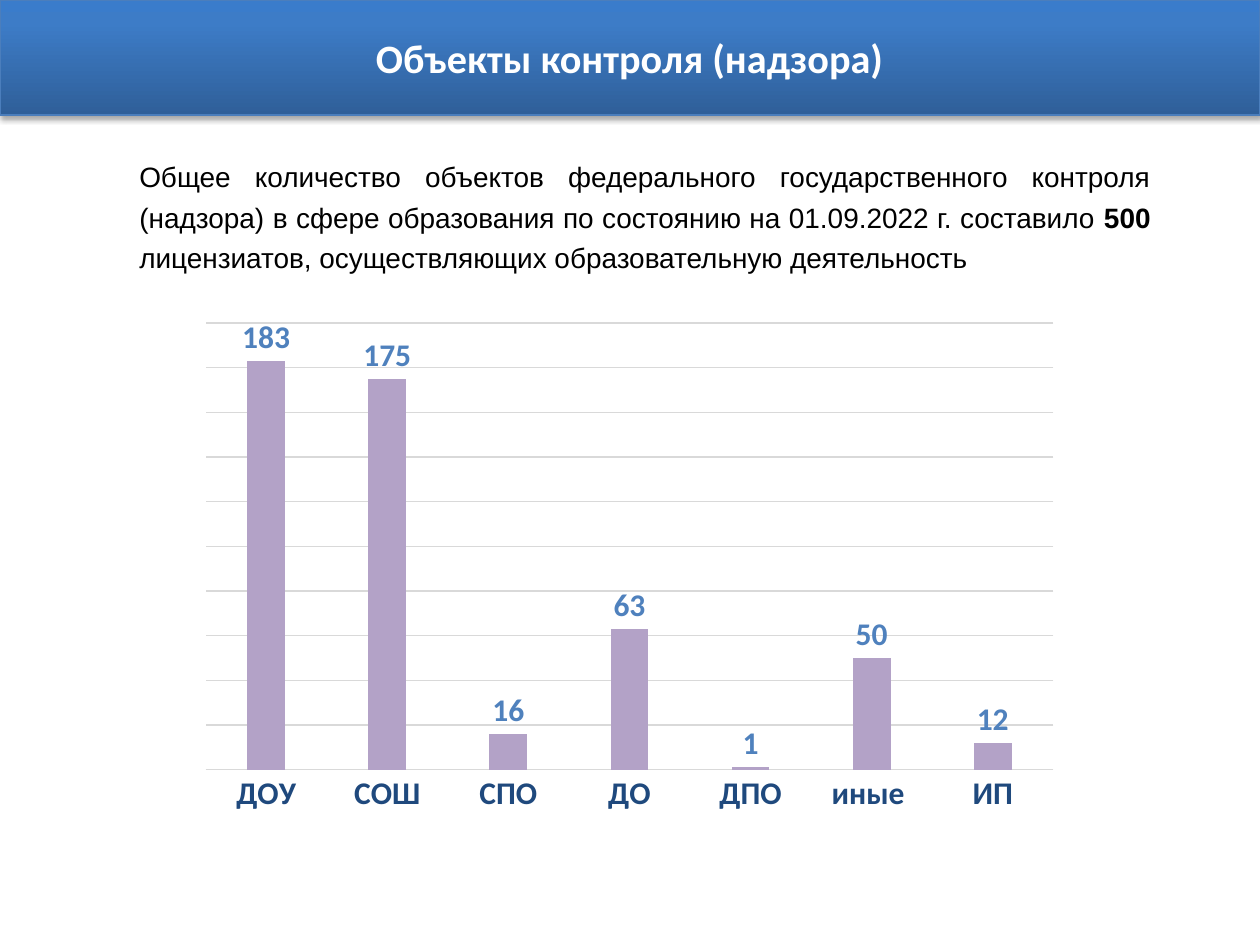
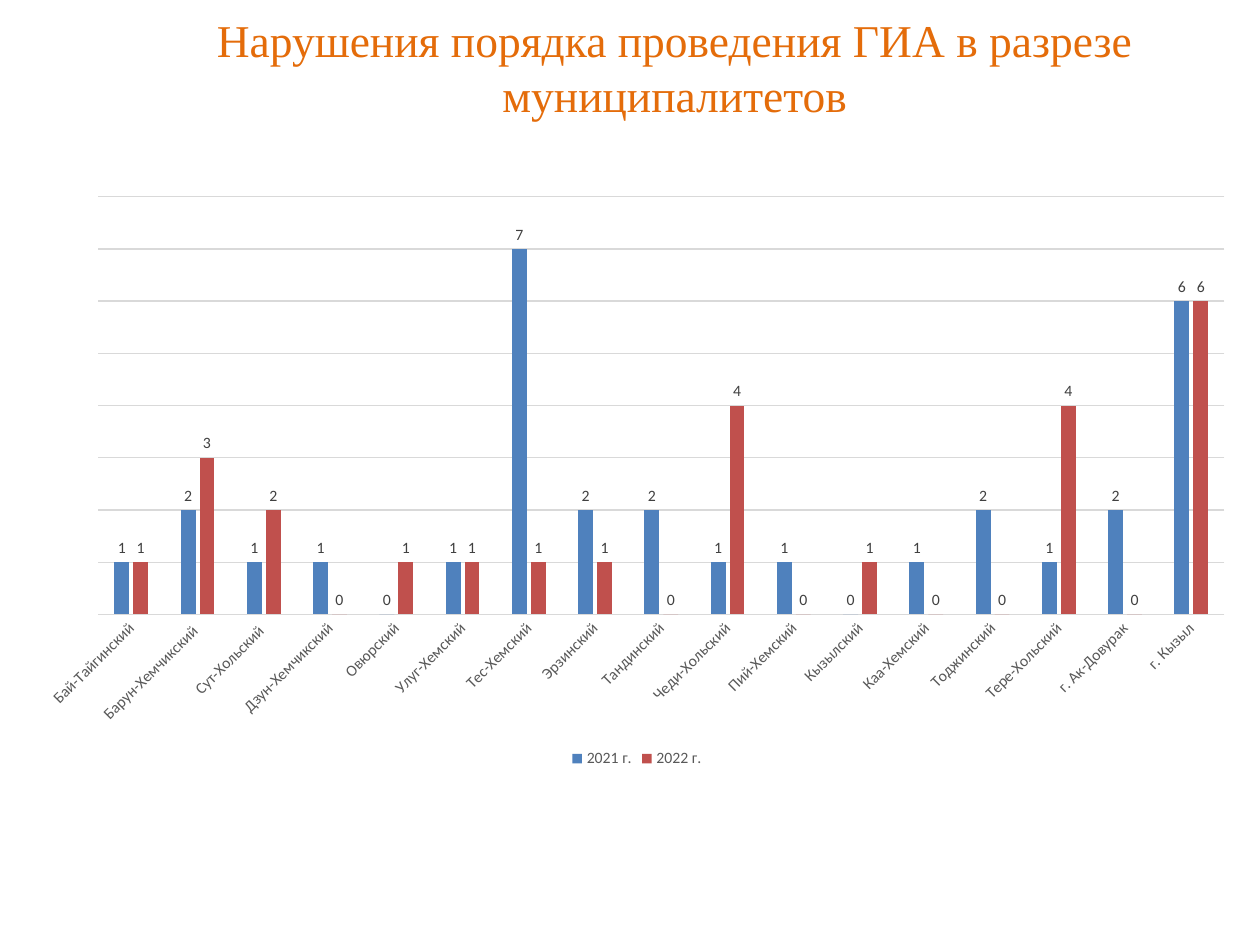
from lxml import etree
from pptx import Presentation
from pptx.chart.data import CategoryChartData
from pptx.dml.color import RGBColor
from pptx.enum.chart import XL_CHART_TYPE, XL_LABEL_POSITION, XL_LEGEND_POSITION, XL_TICK_MARK
from pptx.enum.text import MSO_ANCHOR, MSO_AUTO_SIZE, PP_ALIGN
from pptx.oxml import parse_xml
from pptx.oxml.ns import nsdecls, qn
from pptx.util import Emu, Pt

COLUMNS = XL_CHART_TYPE.COLUMN_CLUSTERED
OUTSIDE = XL_LABEL_POSITION.OUTSIDE_END
BOTTOM = XL_LEGEND_POSITION.BOTTOM
NO_TICK = XL_TICK_MARK.NONE
TOP, MIDDLE = MSO_ANCHOR.TOP, MSO_ANCHOR.MIDDLE
CENTER, JUSTIFY = PP_ALIGN.CENTER, PP_ALIGN.JUSTIFY

PX = 914400 / 126
TITLE_ONLY = 5
WHITE, BLACK, ORANGE = "FFFFFF", "000000", "E46C0A"
GRID, GREY, DARK_GREY = "D9D9D9", "595959", "404040"
BLUE, RED, NAVY, LILAC = "4F81BD", "C0504D", "1F497D", "B3A2C7"
BAND_STOPS = [(0, "2F5F99"), (80, "3D7CC7"), (100, "3A7CCB")]

OBJECTS = {"ДОУ": 183, "СОШ": 175, "СПО": 16, "ДО": 63, "ДПО": 1, "иные ": 50, "ИП": 12}
VIOLATIONS = {
    "Бай-Тайгинский": (1, 1), "Барун-Хемчикский ": (2, 3), "Сут-Хольский ": (1, 2),
    "Дзун-Хемчикский": (1, 0), "Овюрский": (0, 1), "Улуг-Хемский": (1, 1),
    "Тес-Хемский": (7, 1), "Эрзинский": (2, 1), "Тандинский": (2, 0),
    "Чеди-Хольский": (1, 4), "Пий-Хемский": (1, 0), "Кызылский": (0, 1),
    "Каа-Хемский": (1, 0), "Тоджинский": (2, 0), "Тере-Хольский": (1, 4),
    "г. Ак-Довурак": (2, 0), "г. Кызыл": (6, 6),
}


def px(length):
    return Emu(round(length * PX))


def rgb(color):
    return RGBColor.from_string(color)


def style_font(font, name, size, color, bold=False):
    font.name, font.size, font.bold = name, Pt(size), bold
    font.color.rgb = rgb(color)


def add_span(para, text, *font_style):
    span = para.add_run()
    span.text = text
    style_font(span.font, *font_style)
    return span


def add_title(page, text, place, anchor, *font_style):
    """Places and fills the title placeholder; returns it with its text run."""
    title = page.shapes.title
    title.left, title.top, title.width, title.height = map(px, place)
    frame = title.text_frame
    frame.auto_size, frame.word_wrap = MSO_AUTO_SIZE.NONE, True
    frame.vertical_anchor = anchor
    para = frame.paragraphs[0]
    para.alignment = CENTER
    return title, add_span(para, text, *font_style)


def make_band(shape):
    """Gives the shape a vertical gradient, a thin edge and a soft shadow below."""
    stops = "".join(f'<a:gs pos="{percent * 1000}"><a:srgbClr val="{color}"/></a:gs>'
                    for percent, color in BAND_STOPS)
    properties = shape.element.spPr
    properties.append(parse_xml(
        f'<a:prstGeom {nsdecls("a")} prst="rect"><a:avLst/></a:prstGeom>'))
    properties.append(parse_xml(
        f'<a:gradFill {nsdecls("a")} rotWithShape="1"><a:gsLst>{stops}</a:gsLst>'
        '<a:lin ang="16200000" scaled="0"/></a:gradFill>'))
    shape.line.color.rgb = rgb("4B7EBC")
    shape.line.width = Pt(0.75)
    properties.append(parse_xml(
        f'<a:effectLst {nsdecls("a")}><a:outerShdw blurRad="{Pt(3.1)}" dist="{Pt(1.8)}" '
        'dir="5400000" rotWithShape="0"><a:srgbClr val="000000"><a:alpha val="35000"/>'
        '</a:srgbClr></a:outerShdw></a:effectLst>'))


def outline_text(span, color):
    properties = span.font._element
    line = etree.Element(qn("a:ln"), w=str(Pt(1)))
    fill = etree.SubElement(line, qn("a:solidFill"))
    etree.SubElement(fill, qn("a:srgbClr"), val=color)
    properties.insert(0, line)


def add_paragraph_box(page, place, spans):
    """Adds a justified text indented on both sides; spans are (text, bold)."""
    box = page.shapes.add_textbox(*map(px, place))
    box.text_frame.word_wrap = True
    para = box.text_frame.paragraphs[0]
    para.alignment, para.line_spacing, para.space_before = JUSTIFY, 1.2, Pt(1)
    for side in ("marL", "marR"):
        para._p.get_or_add_pPr().set(side, str(px(63)))
    for text, bold in spans:
        add_span(para, text, "Arial", 16, BLACK, bold)


def add_columns(page, place, categories, series, top, step, axis_style, label_style):
    """Adds a column chart; series are (name, values, color)."""
    data = CategoryChartData()
    data.categories = categories
    for name, values, _ in series:
        data.add_series(name, values)
    chart = page.shapes.add_chart(COLUMNS, *map(px, place), data).chart
    chart.has_title = chart.has_legend = False
    style_font(chart.font, "Calibri", 10, BLACK)

    plot = chart.plots[0]
    plot.gap_width, plot.overlap, plot.vary_by_categories = 219, -27, False
    for columns, (_, _, color) in zip(plot.series, series):
        columns.format.fill.solid()
        columns.format.fill.fore_color.rgb = rgb(color)
        columns.format.line.fill.background()
        columns.invert_if_negative = False
        labels = columns.data_labels
        labels.show_value, labels.position = True, OUTSIDE
        style_font(labels.font, "Calibri", *label_style)

    value_axis, category_axis = chart.value_axis, chart.category_axis
    value_axis.visible = False
    value_axis.minimum_scale, value_axis.maximum_scale = 0, top
    value_axis.major_unit = step
    category_axis.major_tick_mark = category_axis.minor_tick_mark = NO_TICK
    style_font(category_axis.tick_labels.font, "Calibri", *axis_style)
    for line in (value_axis.major_gridlines.format.line, category_axis.format.line):
        line.color.rgb = rgb(GRID)
        line.width = Pt(0.75)
    return chart


def slant_labels(axis):
    axis._element.txPr.bodyPr.set("rot", str(-45 * 60000))


def add_bottom_legend(chart, *font_style):
    chart.has_legend = True
    chart.legend.position = BOTTOM
    chart.legend.include_in_layout = False
    style_font(chart.legend.font, "Calibri", *font_style)


def build_objects(page):
    band, _ = add_title(page, "Объекты контроля (надзора)", (0, 0, 1260, 115),
                        MIDDLE, "Calibri", 23, WHITE, True)
    make_band(band)
    add_paragraph_box(page, (64, 147, 1162, 131), [
        ("Общее количество объектов федерального государственного контроля (надзора) "
         "в сфере образования по состоянию на 01.09.2022 г. составило ", False),
        ("500 ", True),
        ("лицензиатов, осуществляющих образовательную деятельность", False),
    ])
    add_columns(page, (188, 313, 883, 510), list(OBJECTS),
                [("Объекты", list(OBJECTS.values()), LILAC)], 200, 20,
                (18, NAVY, True), (18, BLUE, True))


def build_violations(page):
    _, span = add_title(page, "Нарушения порядка проведения ГИА в разрезе муниципалитетов",
                        (94, 6, 1162, 123), TOP, "Times New Roman", 26, ORANGE)
    outline_text(span, ORANGE)
    first_year, second_year = zip(*VIOLATIONS.values())
    chart = add_columns(page, (25, 185, 1224, 588), list(VIOLATIONS),
                        [("2021 г.", first_year, BLUE), ("2022 г.", second_year, RED)],
                        8, 1, (9, GREY), (9, DARK_GREY))
    slant_labels(chart.category_axis)
    add_bottom_legend(chart, 9, GREY)


def main():
    deck = Presentation()
    deck.slide_width, deck.slide_height = px(1260), px(945)
    for build in (build_objects, build_violations):
        build(deck.slides.add_slide(deck.slide_layouts[TITLE_ONLY]))
    deck.save("out.pptx")


if __name__ == "__main__":
    main()
